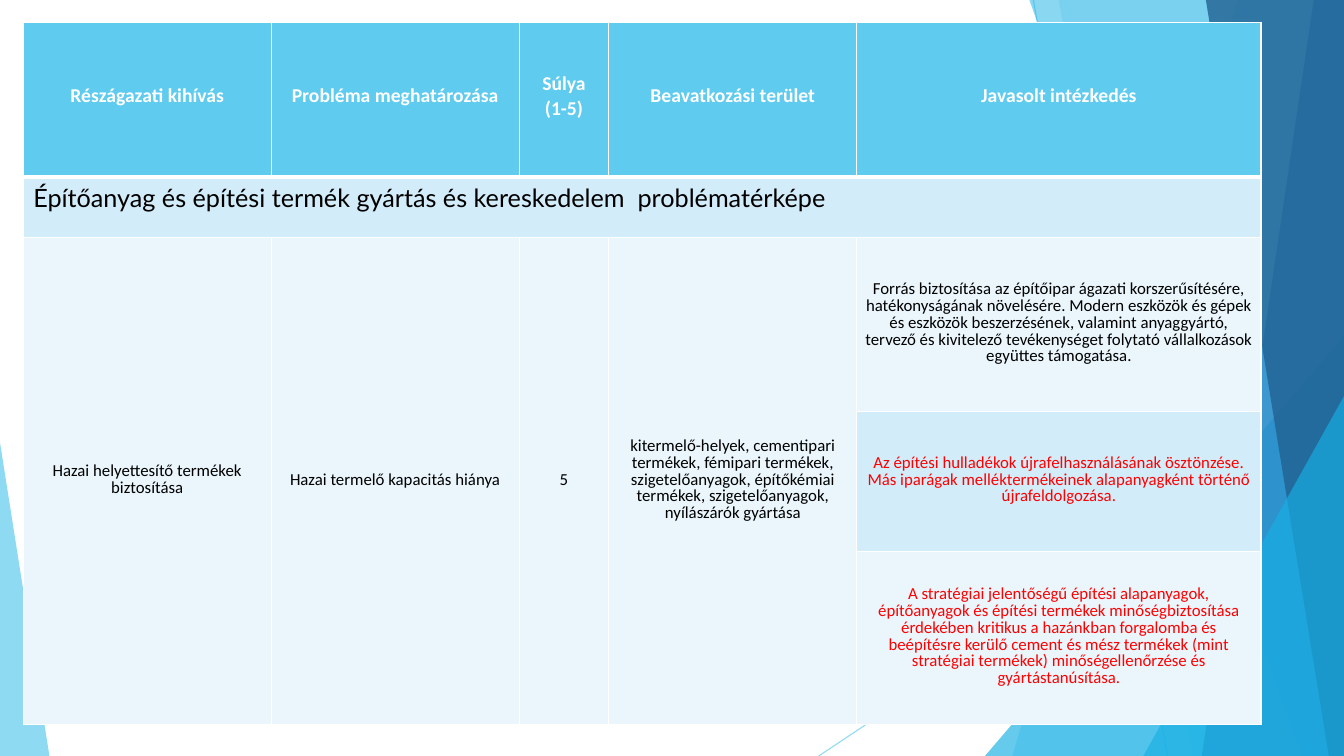
from dataclasses import dataclass

from lxml import etree
from pptx import Presentation
from pptx import util as u
from pptx.dml import color as dml
from pptx.enum import shapes, text
from pptx.oxml import ns

COLOURS = {
    "sky": "5FCBEF",
    "cyan": "17B0E4",
    "blue": "2E83C3",
    "navy": "226292",
    "band": "D2ECF9",
    "pale": "EAF6FC",
    "white": "FFFFFF",
    "black": "000000",
    "red": "FF0000",
}
WIDTH, HEIGHT = u.Inches(13.33), u.Inches(7.5)
TABLE_LEFT, TABLE_TOP = 1.73, 2.93
COLUMNS = [18.45, 18.45, 6.68, 18.45, 30.08]
ROWS = [20.53, 8, 22.93, 18.53, 22.93]


@dataclass
class Ray:
    start: tuple[float, float]
    end: tuple[float, float]


@dataclass
class Facet:
    top_x: float
    bottom_x: float
    colour: str
    opacity: int


@dataclass
class Wedge:
    left: float
    top: float
    width: float
    apex: float
    colour: str
    opacity: int


@dataclass
class Entry:
    row: int
    column: int
    words: str
    fill: str = "pale"
    ink: str = "black"
    size: int = 12
    bold: bool = False
    row_span: int = 1
    column_span: int = 1
    banner: bool = False


BACKDROP = [
    Ray((76.89, 0), (86.87, 100)),
    Ray((100, 53.73), (60.92, 100)),
    Facet(92.12, 75.32, "sky", 36),
    Facet(78.77, 88.75, "sky", 20),
    Wedge(73.29, 44.4, 26.71, 1, "cyan", 66),
    Facet(76.59, 96.85, "cyan", 50),
    Facet(97.75, 89.42, "blue", 70),
    Facet(89.72, 98.87, "navy", 80),
    Wedge(85.07, 52.4, 14.93, 1, "cyan", 66),
    Wedge(0, 58.53, 3.68, 0, "sky", 70),
]
HEADINGS = [
    "Részágazati kihívás",
    "Probléma meghatározása",
    "Súlya\n(1-5)",
    "Beavatkozási terület",
    "Javasolt intézkedés",
]
CHALLENGE = [
    "Hazai helyettesítő termékek biztosítása",
    "Hazai termelő kapacitás hiánya",
    "5",
    "kitermelő-helyek, cementipari termékek, fémipari termékek, szigetelőanyagok, "
    "építőkémiai termékek, szigetelőanyagok, nyílászárók gyártása",
]
ENTRIES = [
    *(Entry(0, i, words, "sky", "white", 14, True) for i, words in enumerate(HEADINGS)),
    Entry(1, 0, "Építőanyag és építési termék gyártás és kereskedelem  problématérképe",
          "band", size=18, column_span=5, banner=True),
    *(Entry(2, i, words, row_span=3) for i, words in enumerate(CHALLENGE)),
    Entry(2, 4, "Forrás biztosítása az építőipar ágazati korszerűsítésére, hatékonyságának "
          "növelésére. Modern eszközök és gépek és eszközök beszerzésének, valamint "
          "anyaggyártó, tervező és kivitelező tevékenységet folytató vállalkozások "
          "együttes támogatása."),
    Entry(3, 4, "Az építési hulladékok újrafelhasználásának ösztönzése. Más iparágak "
          "melléktermékeinek alapanyagként történő újrafeldolgozása.", "band", "red"),
    Entry(4, 4, "A stratégiai jelentőségű építési alapanyagok, építőanyagok és építési "
          "termékek minőségbiztosítása érdekében kritikus a hazánkban forgalomba és "
          "beépítésre kerülő cement és mész termékek (mint stratégiai termékek) "
          "minőségellenőrzése és gyártástanúsítása.", ink="red"),
]


def across(share: float) -> int:
    return round(WIDTH * share / 100)


def down(share: float) -> int:
    return round(HEIGHT * share / 100)


def rgb(name: str) -> dml.RGBColor:
    return dml.RGBColor.from_string(COLOURS[name])


def set_opacity(part, percent: int) -> None:
    for tint in part.element.spPr.iter(ns.qn("a:srgbClr")):
        etree.SubElement(tint, ns.qn("a:alpha"), val=str(percent * 1000))


def draw_ray(slide, ray: Ray) -> None:
    line = slide.shapes.add_connector(
        shapes.MSO_CONNECTOR.STRAIGHT,
        across(ray.start[0]), down(ray.start[1]), across(ray.end[0]), down(ray.end[1]))
    line.line.color.rgb = rgb("sky")
    line.line.width = u.Pt(0.75)
    set_opacity(line, 70)
    etree.SubElement(line.element.spPr, ns.qn("a:effectLst"))


def paint(part, colour: str, opacity: int) -> None:
    part.shadow.inherit = False
    part.fill.solid()
    part.fill.fore_color.rgb = rgb(colour)
    part.line.fill.background()
    set_opacity(part, opacity)


def draw_facet(slide, facet: Facet) -> None:
    outline = slide.shapes.build_freeform(across(facet.top_x), 0)
    outline.add_line_segments(
        [(WIDTH, 0), (WIDTH, HEIGHT), (across(facet.bottom_x), HEIGHT)], close=True)
    paint(outline.convert_to_shape(), facet.colour, facet.opacity)


def draw_wedge(slide, wedge: Wedge) -> None:
    triangle = slide.shapes.add_shape(
        shapes.MSO_SHAPE.ISOSCELES_TRIANGLE, across(wedge.left), down(wedge.top),
        across(wedge.width), down(100 - wedge.top))
    triangle.adjustments[0] = wedge.apex
    paint(triangle, wedge.colour, wedge.opacity)


def add_borders(cell, top: int, bottom: int) -> None:
    properties = cell._tc.get_or_add_tcPr()
    for place, (side, points) in enumerate(
            {"lnL": 1, "lnR": 1, "lnT": top, "lnB": bottom}.items()):
        edge = etree.Element(ns.qn(f"a:{side}"), w=str(u.Pt(points)))
        solid = etree.SubElement(edge, ns.qn("a:solidFill"))
        etree.SubElement(solid, ns.qn("a:srgbClr"), val=COLOURS["white"])
        properties.insert(place, edge)


def fill_entry(table, entry: Entry) -> None:
    cell = table.cell(entry.row, entry.column)
    if entry.row_span > 1 or entry.column_span > 1:
        cell.merge(table.cell(entry.row + entry.row_span - 1,
                              entry.column + entry.column_span - 1))
    cell.fill.solid()
    cell.fill.fore_color.rgb = rgb(entry.fill)
    cell.text = entry.words
    if not entry.banner:
        cell.vertical_anchor = text.MSO_ANCHOR.MIDDLE
        cell.margin_left = cell.margin_right = u.Inches(0.07)
        cell.margin_top = cell.margin_bottom = 0
    for paragraph in cell.text_frame.paragraphs:
        font = paragraph.font
        font.name = "Lato" if entry.banner else "Calibri"
        font.size, font.bold = u.Pt(entry.size), entry.bold
        font.color.rgb = rgb(entry.ink)
        if not entry.banner:
            paragraph.alignment = text.PP_ALIGN.CENTER
            paragraph.line_spacing = u.Pt(12)
            paragraph.space_before = paragraph.space_after = u.Pt(3)


def draw_problem_map(slide) -> None:
    table = slide.shapes.add_table(
        len(ROWS), len(COLUMNS), across(TABLE_LEFT), down(TABLE_TOP),
        across(sum(COLUMNS)), down(sum(ROWS))).table
    table.horz_banding = False
    for column, share in zip(table.columns, COLUMNS):
        column.width = across(share)
    for row, share in zip(table.rows, ROWS):
        row.height = down(share)
    for entry in ENTRIES:
        fill_entry(table, entry)
    for index, row in enumerate(table.rows):
        for cell in row.cells:
            add_borders(cell, 3 if index == 1 else 1, 3 if index == 0 else 1)


def main() -> None:
    deck = Presentation()
    deck.slide_width, deck.slide_height = WIDTH, HEIGHT
    slide = deck.slides.add_slide(deck.slide_layouts[6])
    painters = {Ray: draw_ray, Facet: draw_facet, Wedge: draw_wedge}
    for piece in BACKDROP:
        painters[type(piece)](slide, piece)
    draw_problem_map(slide)
    deck.save("out.pptx")


if __name__ == "__main__":
    main()
